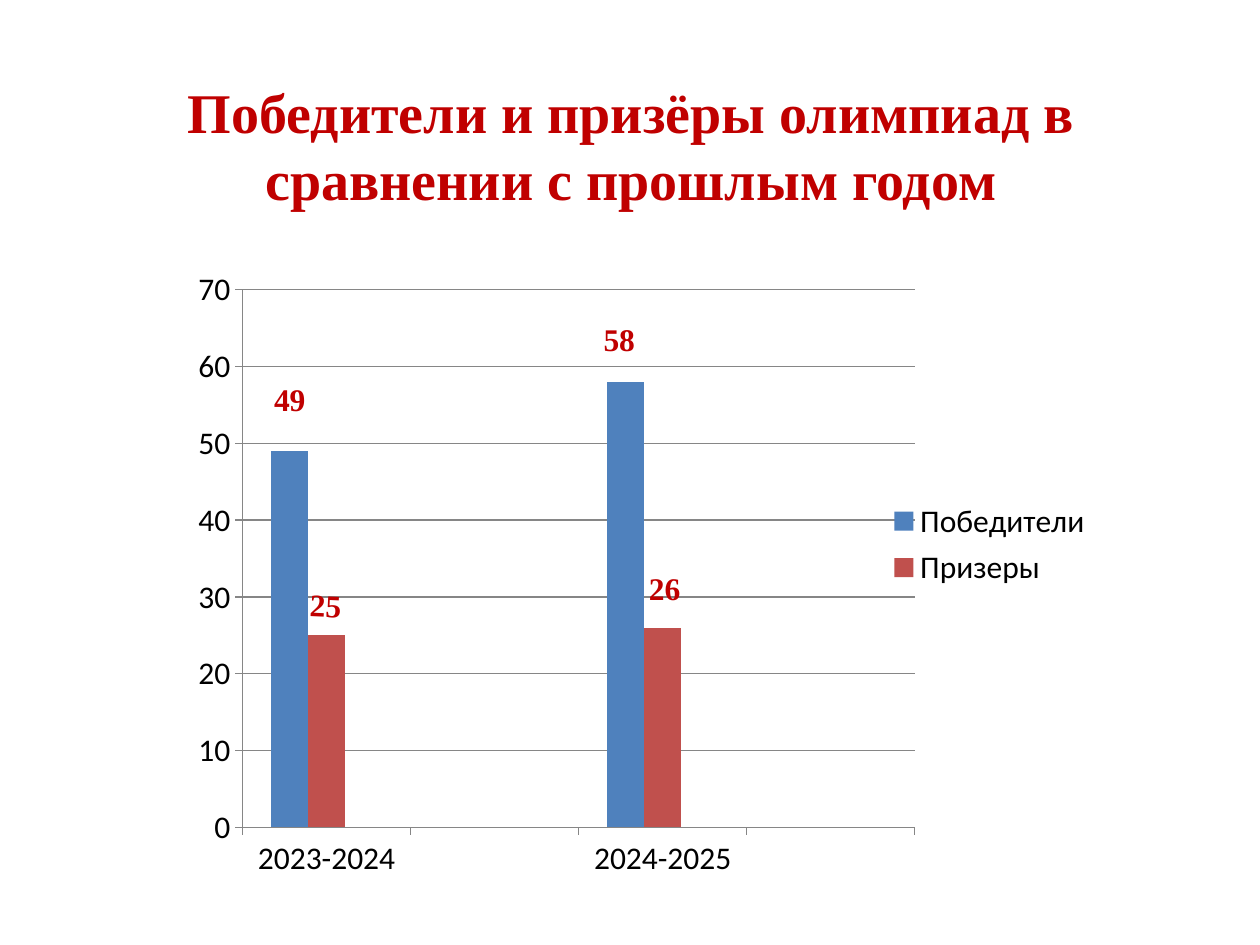
from typing import NamedTuple

from lxml.etree import SubElement
from pptx import Presentation
from pptx.chart.data import CategoryChartData
from pptx.dml.color import RGBColor
from pptx.enum.chart import XL_CHART_TYPE, XL_LEGEND_POSITION, XL_TICK_MARK
from pptx.enum.text import MSO_ANCHOR, MSO_AUTO_SIZE, PP_ALIGN
from pptx.oxml import parse_xml
from pptx.oxml.ns import nsdecls, qn
from pptx.util import Inches, Pt

COLORS = {"red": "C00000", "text": "000000", "line": "868686"}


class Label(NamedTuple):
    text: str
    left: float
    top: float
    width: float
    height: float = 0.4
    size: int = 18
    turn: float = 0
    wrap: bool = True
    grow: bool = True


class Series(NamedTuple):
    name: str
    values: tuple
    color: str


TITLE = Label("Победители и призёры олимпиад в сравнении с прошлым годом",
              0.51, 0.44, 9, 1.42, size=32, grow=False)
LABELS = [
    Label("49", 2.01, 2.97, 0.58),
    Label("25", 2.36, 4.6, 0.45, turn=2.6),
    Label("26", 5.05, 4.47, 0.45, wrap=False),
    Label("58", 4.6, 2.49, 0.63),
]
YEARS = ("2023-2024", "", "2024-2025", "")
SERIES = [
    Series("Победители", (49, None, 58, None), "4F81BD"),
    Series("Призеры", (25, None, 26, None), "C0504D"),
    Series("Series 3", (None,) * 4, "9BBB59"),
]


def rgb(name: str) -> RGBColor:
    return RGBColor.from_string(COLORS.get(name, name))


def style(font, **look) -> None:
    for key, value in look.items():
        setattr(font, key, value)


def draw_label(slide, label: Label) -> None:
    box = slide.shapes.add_textbox(
        *map(Inches, (label.left, label.top, label.width, label.height)))
    box.rotation = label.turn
    frame = box.text_frame
    frame.word_wrap = label.wrap
    frame.auto_size = (MSO_AUTO_SIZE.SHAPE_TO_FIT_TEXT if label.grow
                       else MSO_AUTO_SIZE.NONE)
    frame.vertical_anchor = MSO_ANCHOR.TOP if label.grow else MSO_ANCHOR.MIDDLE
    para = frame.paragraphs[0]
    para.alignment = PP_ALIGN.CENTER
    run = para.add_run()
    run.text = label.text
    style(run.font, name="Times New Roman", size=Pt(label.size), bold=True)
    run.font.color.rgb = rgb("red")


def set_layout(parent, index: int, inner: bool, **place: float) -> None:
    """Give a chart part a fixed place, in shares of the chart."""
    for old in parent.findall(qn("c:layout")):
        parent.remove(old)
    layout = parse_xml(f"<c:layout {nsdecls('c')}><c:manualLayout/></c:layout>")
    marks = {"layoutTarget": "inner"} if inner else {}
    marks |= {"xMode": "edge", "yMode": "edge", **place}
    for tag, value in marks.items():
        SubElement(layout[0], qn(f"c:{tag}")).set("val", str(value))
    parent.insert(index, layout)


def draw_chart(slide) -> None:
    data = CategoryChartData()
    data.categories = YEARS
    for item in SERIES:
        data.add_series(item.name, item.values)
    chart = slide.shapes.add_chart(
        XL_CHART_TYPE.COLUMN_CLUSTERED,
        *map(Inches, (1.38, 1.94, 7.8, 5.35)), data).chart
    chart.has_title = False
    style(chart.font, name="Calibri", size=Pt(18))
    chart.font.color.rgb = rgb("text")

    # Columns
    plot = chart.plots[0]
    plot.gap_width = 150
    plot.vary_by_categories = False
    for series, item in zip(plot.series, SERIES):
        series.format.fill.solid()
        series.format.fill.fore_color.rgb = rgb(item.color)

    # Axes and grid
    values = chart.value_axis
    style(values, minimum_scale=0, maximum_scale=70, major_unit=10,
          has_major_gridlines=True)
    for axis in (chart.category_axis, values):
        axis.major_tick_mark = XL_TICK_MARK.OUTSIDE
        axis.minor_tick_mark = XL_TICK_MARK.NONE
    for part in (chart.category_axis, values, values.major_gridlines):
        part.format.line.width = Pt(0.75)
        part.format.line.color.rgb = rgb("line")
    area = chart._chartSpace.chart.plotArea
    set_layout(area, 0, True, x=0.07, y=0.067, w=0.684, h=0.798)

    # Legend without the empty series
    chart.has_legend = True
    legend = chart.legend
    legend.position = XL_LEGEND_POSITION.RIGHT
    legend.include_in_layout = False
    node = legend._element
    set_layout(node, 1, False, x=0.72, y=0.37, w=0.22, h=0.15)
    node.insert(1, parse_xml(
        f"<c:legendEntry {nsdecls('c')}><c:idx val='2'/>"
        "<c:delete val='1'/></c:legendEntry>"))


def main() -> None:
    deck = Presentation()
    deck.slide_width, deck.slide_height = Inches(10), Inches(7.5)
    slide = deck.slides.add_slide(deck.slide_layouts[6])
    draw_label(slide, TITLE)
    draw_chart(slide)
    for label in LABELS:
        draw_label(slide, label)
    deck.save("out.pptx")


if __name__ == "__main__":
    main()
